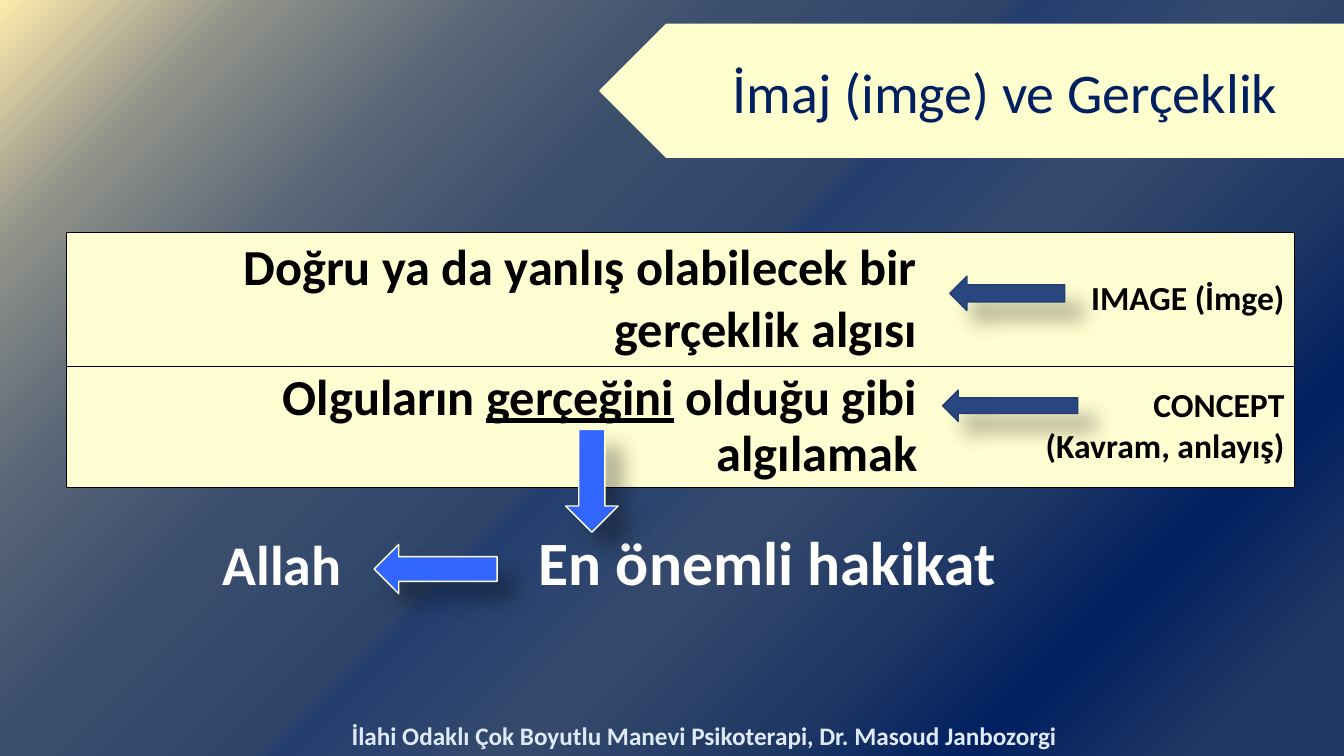
from dataclasses import dataclass

from pptx import Presentation
from pptx.dml.color import RGBColor
from pptx.enum.shapes import MSO_SHAPE as Shape
from pptx.enum.text import MSO_ANCHOR as Anchor, MSO_AUTO_SIZE as AutoSize, PP_ALIGN as Align
from pptx.oxml import parse_xml
from pptx.oxml.ns import nsdecls, qn
from pptx.util import Inches, Pt


@dataclass
class Theme:
    font: str = "Calibri"
    navy: str = "002060"
    banner: str = "FFFECE"
    cream: str = "FFFED2"
    black: str = "000000"
    white: str = "FFFFFF"
    pale: str = "DEEBF7"
    slate: str = "284780"
    slate_edge: str = "233E6F"
    bright: str = "3366FF"
    truth_size: int = 44
    title_size: int = 40
    meaning_size: int = 36
    term_size: int = 24
    footer_size: int = 18


theme = Theme()


def style(frame, size, color, align, bold=True):
    for para in frame.paragraphs:
        para.alignment = align
        for span in para.runs:
            span.font.name = theme.font
            span.font.size = Pt(size)
            span.font.bold = bold
            span.font.color.rgb = RGBColor.from_string(color)


def add_arrow(kind, place, fill, edge):
    arrow = page.shapes.add_shape(kind, *map(Inches, place))
    arrow.shadow.inherit = False
    arrow.fill.solid()
    arrow.fill.fore_color.rgb = RGBColor.from_string(fill)
    arrow.line.color.rgb = RGBColor.from_string(edge)
    arrow.line.width = Pt(1)
    return arrow


deck = Presentation()
deck.slide_width, deck.slide_height = Inches(13.33), Inches(7.5)
page = deck.slides.add_slide(deck.slide_layouts[1])

stops = [
    (0, "FFEBAD"), (12, "909289"), (24, "586577"), (35, "3C4F6E"), (48, "2E4469"),
    (49, "233E6F"), (60, "354A6C"), (72, "203864"), (82, "002060"), (93, "203864"),
]
stop_xml = "".join(
    f'<a:gs pos="{percent * 1000}"><a:srgbClr val="{color}"/></a:gs>' for percent, color in stops
)
page.background.fill.gradient()
plain_gradient = page.element.find(".//" + qn("a:gradFill"))
plain_gradient.getparent().replace(plain_gradient, parse_xml(
    f'<a:gradFill {nsdecls("a")} rotWithShape="1"><a:gsLst>{stop_xml}</a:gsLst>'
    '<a:path path="circle"><a:fillToRect r="100000" b="100000"/></a:path></a:gradFill>'
))

banner = add_arrow(Shape.LEFT_ARROW, (5.95, 0.24, 7.38, 1.32), theme.banner, theme.banner)
banner.adjustments[0] = 1
page.shapes.title.element.addprevious(banner.element)

title, truth = page.placeholders
title.left, title.top, title.width, title.height = map(Inches, (6.61, 0.24, 6.72, 1.32))
title.text_frame.text = "İmaj (imge) ve Gerçeklik"
title.text_frame.auto_size = AutoSize.NONE
title.text_frame.vertical_anchor = Anchor.MIDDLE
style(title.text_frame, theme.title_size, theme.navy, Align.CENTER, bold=False)

truth.left, truth.top, truth.width, truth.height = map(Inches, (3.52, 5.23, 6.46, 0.79))
truth.text_frame.text = "En önemli hakikat"
truth.text_frame.auto_size = AutoSize.NONE
style(truth.text_frame, theme.truth_size, theme.white, Align.RIGHT)
truth_para = truth.text_frame.paragraphs[0]
truth_para.line_spacing, truth_para.space_before = 0.9, Pt(10)
truth_format = truth_para._p.get_or_add_pPr()
truth_format.set("marL", "0")
truth_format.set("indent", "0")
truth_format.append(parse_xml(f'<a:buNone {nsdecls("a")}/>'))

table = page.shapes.add_table(2, 2, *map(Inches, (0.66, 2.31, 12.18, 2.48))).table
table.first_row = table.horz_banding = False
for column, width in zip(table.columns, (8.54, 3.64)):
    column.width = Inches(width)
for row, height in zip(table.rows, (1.1, 1.12)):
    row.height = Inches(height)

definitions = [
    ("Doğru ya da yanlış olabilecek bir gerçeklik algısı", "IMAGE (İmge)"),
    ("Olguların gerçeğini olduğu gibi algılamak", "CONCEPT\n(Kavram, anlayış)"),
]
for row, texts in zip(table.rows, definitions):
    for index, (cell, text) in enumerate(zip(row.cells, texts)):
        cell.text_frame.text = text
        cell.vertical_anchor = Anchor.MIDDLE
        size = (theme.meaning_size, theme.term_size)[index]
        style(cell.text_frame, size, theme.black, Align.RIGHT)
        cell.fill.solid()
        cell.fill.fore_color.rgb = RGBColor.from_string(theme.cream)
        inner_side = "RL"[index]
        for position, side in enumerate("LRTB"):
            paint = "<a:noFill/>" if side == inner_side else (
                f'<a:solidFill><a:srgbClr val="{theme.black}"/></a:solidFill>'
            )
            cell._tc.tcPr.insert(position, parse_xml(
                f'<a:ln{side} {nsdecls("a")} w="{Pt(1)}">{paint}</a:ln{side}>'
            ))

concept = table.cell(1, 0).text_frame
concept_para = concept.paragraphs[0]
concept_para.line_spacing, concept_para.space_before = 0.9, Pt(10)
concept_para.runs[0].text = "Olguların "
for text in ("gerçeğini", " olduğu gibi algılamak"):
    concept_para.add_run().text = text
style(concept, theme.meaning_size, theme.black, Align.RIGHT)
concept_para.runs[1].font.underline = True

arrows = [
    (Shape.LEFT_ARROW, (9.35, 3.87, 1.34, 0.31), theme.slate, theme.slate_edge),
    (Shape.LEFT_ARROW, (9.42, 2.74, 1.14, 0.34), theme.slate, theme.slate_edge),
    (Shape.LEFT_ARROW, (3.71, 5.4, 1.22, 0.49), theme.bright, theme.cream),
    (Shape.DOWN_ARROW, (5.61, 4.26, 0.52, 1.02), theme.bright, theme.cream),
]
for details in arrows:
    arrow = add_arrow(*details)
    arrow.element.spPr.find(qn("a:effectLst")).append(parse_xml(
        f'<a:outerShdw {nsdecls("a")} blurRad="{Pt(15)}" dist="{Pt(18)}" dir="{45 * 60000}" '
        f'algn="tl" rotWithShape="0"><a:srgbClr val="{theme.black}">'
        '<a:alpha val="30000"/></a:srgbClr></a:outerShdw>'
    ))

labels = [
    ("Allah", (2.11, 5.2, 1.85, 0.77), theme.title_size, theme.white, Align.LEFT),
    ("İlahi Odaklı Çok Boyutlu Manevi Psikoterapi, Dr. Masoud Janbozorgi",
     (3.16, 7.1, 7.65, 0.4), theme.footer_size, theme.pale, Align.CENTER),
]
for text, place, size, color, align in labels:
    box = page.shapes.add_textbox(*map(Inches, place))
    box.text_frame.word_wrap = True
    box.text_frame.text = text
    style(box.text_frame, size, color, align)

deck.save("out.pptx")
